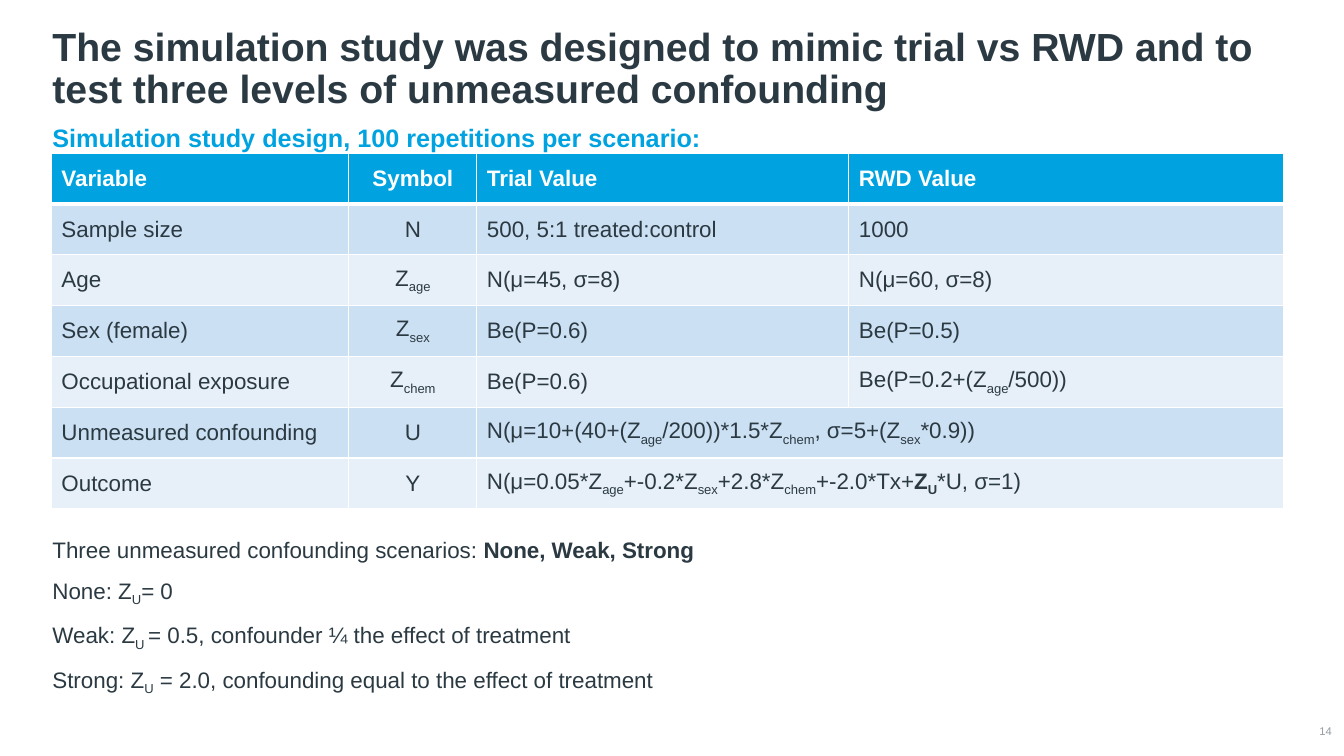
from lxml import etree
from pptx import Presentation
from pptx.dml.color import RGBColor
from pptx.enum.text import MSO_ANCHOR, MSO_AUTO_SIZE, PP_ALIGN
from pptx.oxml.ns import qn
from pptx.util import Inches, Pt

LEFT, CENTER, RIGHT = PP_ALIGN.LEFT, PP_ALIGN.CENTER, PP_ALIGN.RIGHT
MIDDLE, BOTTOM = MSO_ANCHOR.MIDDLE, MSO_ANCHOR.BOTTOM
NO_AUTOFIT = MSO_AUTO_SIZE.NONE

FONT = "Arial"
COLORS = {
    "ink": "2B3A42",
    "accent": "00A3E0",
    "white": "FFFFFF",
    "band_dark": "CCE0F3",
    "band_light": "E7F0F9",
    "page": "959CA0",
}

# In all text, |...| marks bold and _..._ marks subscript.
TITLE = ("|The simulation study was designed to mimic trial vs RWD and to "
         "test three levels of unmeasured confounding|")
SUBTITLE = "|Simulation study design, 100 repetitions per scenario:|"
SCENARIOS = [
    "Three unmeasured confounding scenarios: |None, Weak, Strong|",
    "None: Z_U_= 0",
    "Weak: Z_U _= 0.5, confounder ¼ the effect of treatment",
    "Strong: Z_U_ = 2.0, confounding equal to the effect of treatment",
]
PAGE_NUMBER = "14"

# A row with three entries spreads its last one over both value columns.
DESIGN = [
    ("|Variable|", "|Symbol|", "|Trial Value|", "|RWD Value|"),
    ("Sample size", "N", "500, 5:1 treated:control", "1000"),
    ("Age", "Z_age_", "N(μ=45, σ=8)", "N(μ=60, σ=8)"),
    ("Sex (female)", "Z_sex_", "Be(P=0.6)", "Be(P=0.5)"),
    ("Occupational exposure", "Z_chem_", "Be(P=0.6)", "Be(P=0.2+(Z_age_/500))"),
    ("Unmeasured confounding", "U",
     "N(μ=10+(40+(Z_age_/200))*1.5*Z_chem_, σ=5+(Z_sex_*0.9))"),
    ("Outcome", "Y",
     "N(μ=0.05*Z_age_+-0.2*Z_sex_+2.8*Z_chem_+-2.0*Tx+|Z_U_|*U, σ=1)"),
]
COLUMN_WIDTHS = [2.95, 1.27, 3.69, 4.31]
ROW_HEIGHT = 3.53 / len(DESIGN)
TABLE_LEFT, TABLE_TOP = 0.51, 1.52
GAP_OVER_TABLE = 274  # points between the subtitle and the scenarios


def rgb(name):
    return RGBColor.from_string(COLORS[name])


def write(paragraph, marked_text, size, color, align=LEFT):
    """Add one run for each stretch of bold, subscript or plain text."""
    paragraph.alignment = align
    for bold_index, stretch in enumerate(marked_text.split("|")):
        for sub_index, piece in enumerate(stretch.split("_")):
            if not piece:
                continue
            run = paragraph.add_run()
            run.text = piece
            font = run.font
            font.name, font.size = FONT, Pt(size)
            font.bold = bold_index % 2 == 1
            font.color.rgb = rgb(color)
            if sub_index % 2:
                run._r.get_or_add_rPr().set("baseline", "-25000")


def place(shape, left, top, width, height):
    shape.left, shape.top = Inches(left), Inches(top)
    shape.width, shape.height = Inches(width), Inches(height)


def remove_bullet(paragraph):
    properties = paragraph._p.get_or_add_pPr()
    properties.set("marL", "0")
    properties.set("indent", "0")
    etree.SubElement(properties, qn("a:buNone"))


def add_border(cell, side, points):
    line = etree.SubElement(cell._tc.get_or_add_tcPr(), qn(f"a:ln{side}"),
                            w=str(Pt(points)))
    fill = etree.SubElement(line, qn("a:solidFill"))
    etree.SubElement(fill, qn("a:srgbClr"), val=COLORS["white"])


def add_title(slide):
    title = slide.shapes.title
    place(title, 0.42, 0.32, 12.4, 0.84)
    frame = title.text_frame
    frame.auto_size = NO_AUTOFIT
    frame.vertical_anchor = BOTTOM
    paragraph = frame.paragraphs[0]
    paragraph.line_spacing = 0.9
    write(paragraph, TITLE, 28, "ink")


def add_body(slide):
    body = slide.placeholders[1]
    place(body, 0.42, 1.16, 7.45, 5.71)
    frame = body.text_frame
    frame.auto_size = NO_AUTOFIT
    subtitle = frame.paragraphs[0]
    remove_bullet(subtitle)
    subtitle.space_before = Pt(0)
    write(subtitle, SUBTITLE, 18, "accent")
    for index, scenario in enumerate(SCENARIOS):
        paragraph = frame.add_paragraph()
        remove_bullet(paragraph)
        paragraph.space_before = Pt(10 if index else GAP_OVER_TABLE)
        write(paragraph, scenario, 16, "ink")


def add_design_table(slide):
    table = slide.shapes.add_table(
        len(DESIGN), len(COLUMN_WIDTHS), Inches(TABLE_LEFT), Inches(TABLE_TOP),
        Inches(sum(COLUMN_WIDTHS)), Inches(ROW_HEIGHT * len(DESIGN))).table
    for column, width in zip(table.columns, COLUMN_WIDTHS):
        column.width = Inches(width)
    for row_index, entries in enumerate(DESIGN):
        header = row_index == 0
        band = "band_dark" if row_index % 2 else "band_light"
        for column_index in range(len(COLUMN_WIDTHS)):
            cell = table.cell(row_index, column_index)
            cell.vertical_anchor = MIDDLE
            for side in "LRTB":
                thick = (header and side == "B") or (row_index == 1 and side == "T")
                add_border(cell, side, 3 if thick else 1)
            cell.fill.solid()
            cell.fill.fore_color.rgb = rgb("accent" if header else band)
            if column_index < len(entries):
                write(cell.text_frame.paragraphs[0], entries[column_index], 16,
                      "white" if header else "ink",
                      CENTER if column_index == 1 else LEFT)
        if len(entries) < len(COLUMN_WIDTHS):
            table.cell(row_index, 2).merge(table.cell(row_index, 3))


def add_page_number(slide):
    box = slide.shapes.add_textbox(
        Inches(12.82), Inches(7.16), Inches(0.39), Inches(0.19))
    frame = box.text_frame
    frame.word_wrap = True
    frame.vertical_anchor = MIDDLE
    frame.margin_left = frame.margin_right = 0
    frame.margin_top = frame.margin_bottom = 0
    write(frame.paragraphs[0], PAGE_NUMBER, 8, "page", RIGHT)


def main():
    presentation = Presentation()
    presentation.slide_width = Inches(13.33)
    presentation.slide_height = Inches(7.5)
    slide = presentation.slides.add_slide(presentation.slide_layouts[1])
    add_page_number(slide)
    add_body(slide)
    add_title(slide)
    add_design_table(slide)
    presentation.save("out.pptx")


if __name__ == "__main__":
    main()
